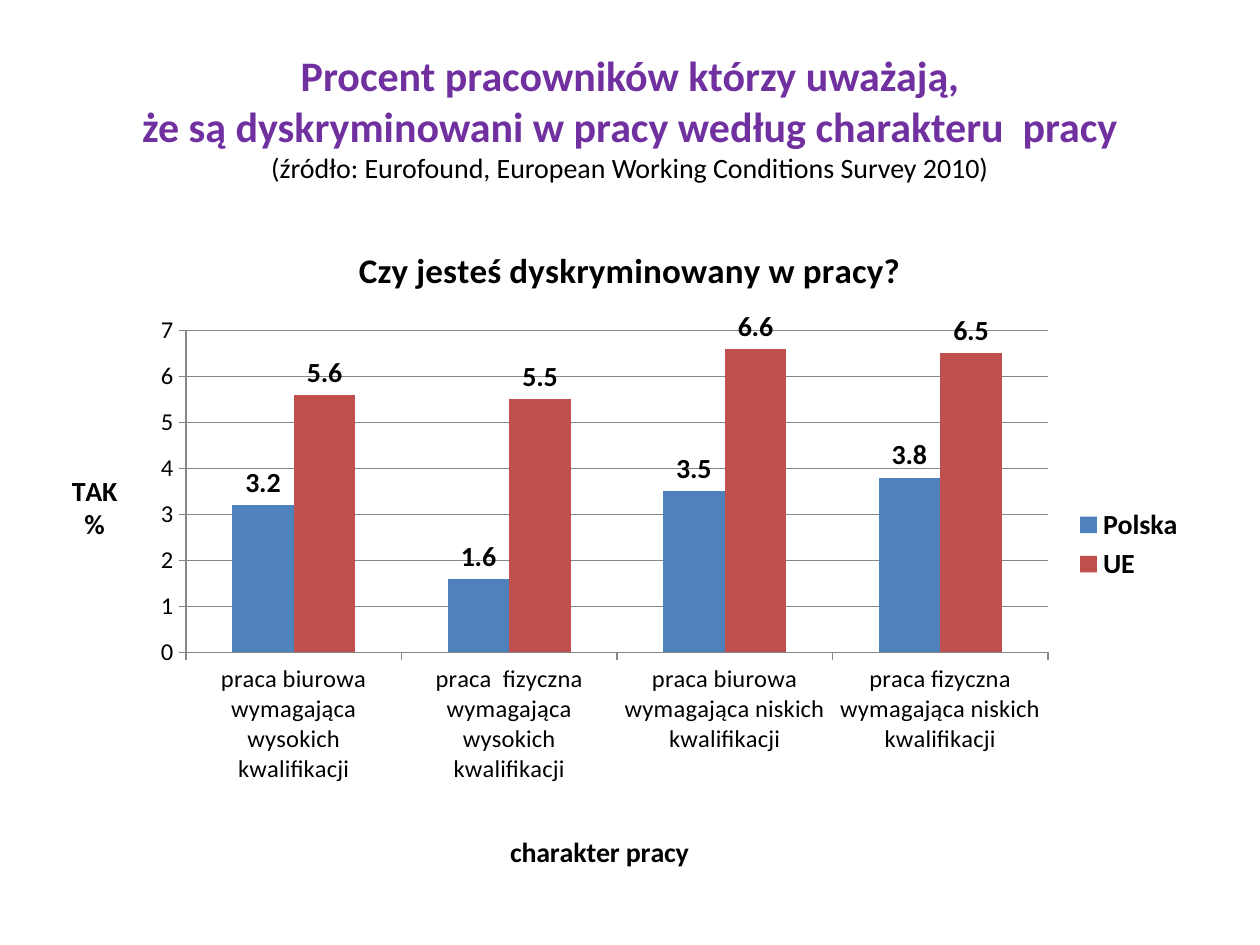
from lxml.etree import SubElement
from pptx import Presentation
from pptx.chart.data import CategoryChartData
from pptx.dml.color import RGBColor
from pptx.enum.chart import (XL_CHART_TYPE, XL_LABEL_POSITION,
                             XL_LEGEND_POSITION, XL_TICK_MARK)
from pptx.enum.text import MSO_ANCHOR, PP_ALIGN
from pptx.oxml import parse_xml
from pptx.oxml.ns import nsdecls, qn
from pptx.util import Emu, Pt

PURPLE = RGBColor(0x70, 0x30, 0xA0)
BLACK = RGBColor(0, 0, 0)
GREY = RGBColor(0x86, 0x86, 0x86)
BLUE = RGBColor(0x4F, 0x81, 0xBD)
RED = RGBColor(0xC0, 0x50, 0x4D)
FACE = "Calibri"

CATS = [
    "praca biurowa wymagająca wysokich kwalifikacji",
    "praca  fizyczna wymagająca wysokich kwalifikacji",
    "praca biurowa wymagająca niskich kwalifikacji",
    "praca fizyczna wymagająca niskich kwalifikacji",
]
SERIES = [
    ("Polska", (3.2, 1.6, 3.5, 3.8), BLUE),
    ("UE", (5.6, 5.5, 6.6, 6.5), RED),
]


def px(n):
    return Emu(round(n * 914400 / 126))


def style(font, size, bold=False, color=BLACK):
    font.name = FACE
    font.size = Pt(size)
    font.bold = bold
    font.color.rgb = color


def heading(slide, x, y, w, h):
    frame = slide.shapes.add_textbox(px(x), px(y), px(w), px(h)).text_frame
    frame.word_wrap = True
    frame.vertical_anchor = MSO_ANCHOR.MIDDLE
    lines = [
        ("Procent pracowników którzy uważają,", 24, True, PURPLE),
        ("że są dyskryminowani w pracy według charakteru  pracy", 24, True, PURPLE),
        ("(źródło: Eurofound, European Working Conditions Survey 2010)",
         16, False, BLACK),
    ]
    frame.text = "\n".join(line[0] for line in lines)
    for para, (_, size, bold, color) in zip(frame.paragraphs, lines):
        para.alignment = PP_ALIGN.CENTER
        style(para.font, size, bold, color)


def place(node, index, inner=False, **sides):
    """Give a chart part a manual layout, in fractions of the chart."""
    for old in node.findall(qn("c:layout")):
        node.remove(old)
    layout = parse_xml(f"<c:layout {nsdecls('c')}><c:manualLayout/></c:layout>")
    manual = layout[0]
    if inner:
        SubElement(manual, qn("c:layoutTarget")).set("val", "inner")
    for side in "xy":
        SubElement(manual, qn(f"c:{side}Mode")).set("val", "edge")
    for side, value in sides.items():
        SubElement(manual, qn(f"c:{side}")).set("val", f"{value:.4f}")
    node.insert(index, layout)


def caption(title, text, size):
    title.text_frame.text = text
    for para in title.text_frame.paragraphs:
        style(para.font, size, True)


def bars(slide, x, y, w, h):
    data = CategoryChartData(number_format="General")
    data.categories = CATS
    for name, values, _ in SERIES:
        data.add_series(name, values)
    chart = slide.shapes.add_chart(XL_CHART_TYPE.COLUMN_CLUSTERED,
                                   px(x), px(y), px(w), px(h), data).chart
    style(chart.font, 10)
    chart.has_title = True
    caption(chart.chart_title, "Czy jesteś dyskryminowany w pracy?", 20)

    # Columns and their values
    plot = chart.plots[0]
    plot.gap_width = 150
    plot.overlap = 0
    plot.vary_by_categories = False
    for series, (_, _, color) in zip(plot.series, SERIES):
        series.format.fill.solid()
        series.format.fill.fore_color.rgb = color
        labels = series.data_labels
        labels.show_value = True
        labels.position = XL_LABEL_POSITION.OUTSIDE_END
        style(labels.font, 16, True)

    # Axes and their titles, placed from the chart's corner
    axes = [
        (chart.category_axis, "charakter pracy", 442, 618),
        (chart.value_axis, "TAK\n%", 5, 253),
    ]
    for axis, text, left, top in axes:
        axis.major_tick_mark = XL_TICK_MARK.OUTSIDE
        axis.minor_tick_mark = XL_TICK_MARK.NONE
        axis.format.line.color.rgb = GREY
        style(axis.tick_labels.font, 14)
        caption(axis.axis_title, text, 16)
        node = axis.axis_title._element
        body = next(node.iter(qn("a:bodyPr")))
        body.set("rot", "0")
        body.set("vert", "horz")
        place(node, 1, x=left / w, y=top / h)
    scale = chart.value_axis
    scale.minimum_scale, scale.maximum_scale, scale.major_unit = 0, 7, 1
    scale.has_major_gridlines = True
    scale.major_gridlines.format.line.color.rgb = GREY
    area = next(chart._chartSpace.iter(qn("c:plotArea")))
    place(area, 0, inner=True, x=123 / w, y=112 / h, w=862 / w, h=327 / h)

    # Legend
    chart.has_legend = True
    chart.legend.position = XL_LEGEND_POSITION.RIGHT
    chart.legend.include_in_layout = False
    style(chart.legend.font, 16, True)


def main():
    deck = Presentation()
    deck.slide_width, deck.slide_height = px(1260), px(945)
    slide = deck.slides.add_slide(deck.slide_layouts[6])
    heading(slide, 63, 38, 1134, 158)
    bars(slide, 63, 220, 1134, 659)
    deck.save("out.pptx")


if __name__ == "__main__":
    main()
